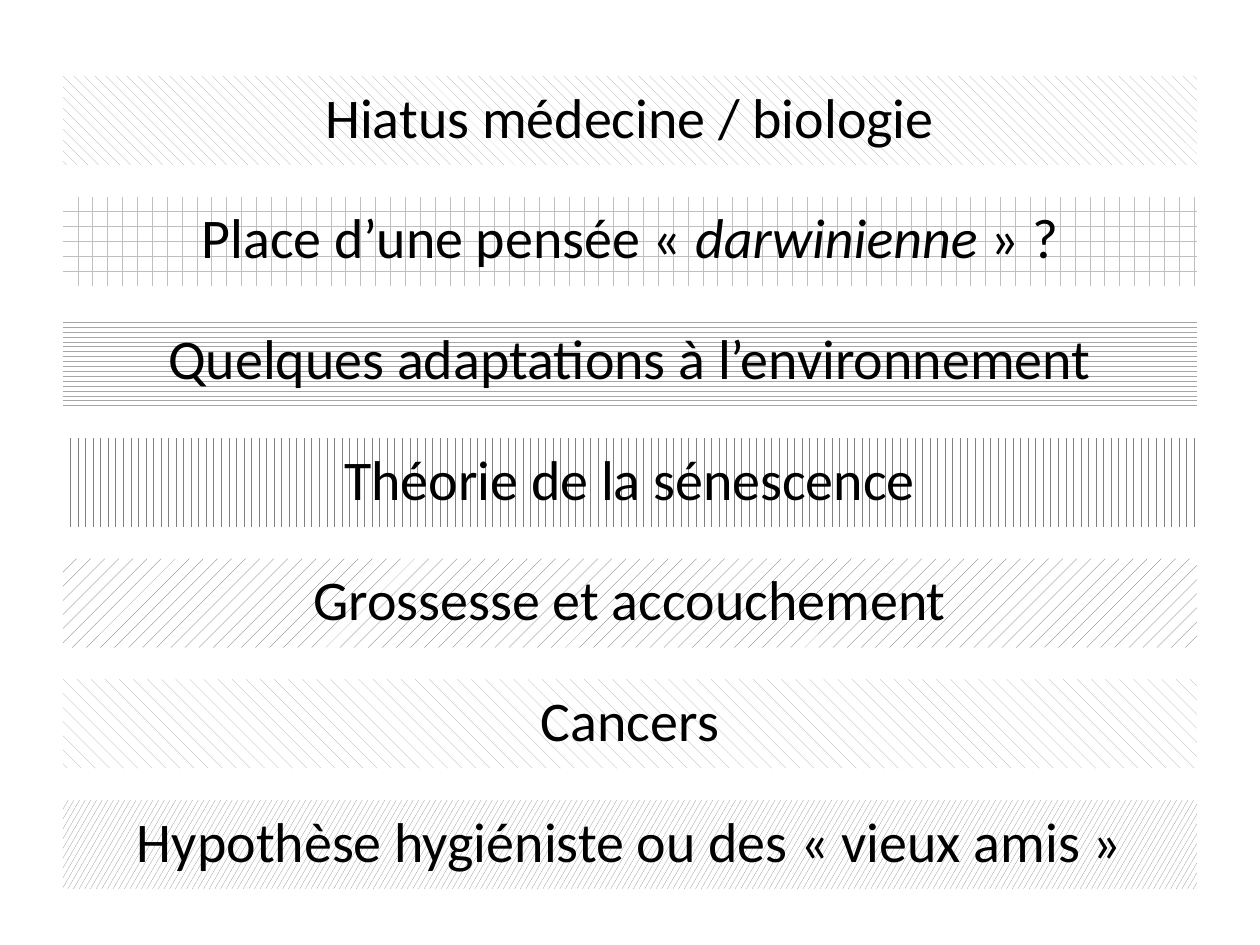
from lxml import etree
from pptx import Presentation
from pptx.dml.color import RGBColor
from pptx.enum.dml import MSO_PATTERN
from pptx.enum.shapes import MSO_SHAPE
from pptx.enum.text import MSO_ANCHOR, MSO_AUTO_SIZE, PP_ALIGN
from pptx.oxml.ns import qn
from pptx.util import Pt

PX = 914400 / 126
RECTANGLE = MSO_SHAPE.RECTANGLE
TOP, NO_AUTOFIT, CENTER = MSO_ANCHOR.TOP, MSO_AUTO_SIZE.NONE, PP_ALIGN.CENTER

COLORS = {
    "text": "000000",
    "paper": "FFFFFF",
    "light": "BFBFBF",
    "silver": "A6A6A6",
    "gray": "808080",
    "dark": "595959",
}

# Each topic: pattern, pattern colour, text runs as (text, italic)
TOPICS = [
    (MSO_PATTERN.DASHED_DOWNWARD_DIAGONAL, "silver",
     [("Hiatus médecine / biologie", False)]),
    (MSO_PATTERN.HORIZONTAL_BRICK, "light",
     [("Place d’une pensée « ", False), ("darwinienne", True), (" » ?", False)]),
    (MSO_PATTERN.WAVE, "silver",
     [("Quelques adaptations à l’environnement", False)]),
    (MSO_PATTERN.DASHED_VERTICAL, "gray",
     [("Théorie de la sénescence", False)]),
    (MSO_PATTERN.PERCENT_10, "dark",
     [("Grossesse et accouchement", False)]),
    (MSO_PATTERN.SHINGLE, "silver",
     [("Cancers", False)]),
    (MSO_PATTERN.LARGE_CONFETTI, "gray",
     [("Hypothèse hygiéniste ou des « vieux amis »", False)]),
]

FRAME_FORMAT = {"word_wrap": True, "auto_size": NO_AUTOFIT, "vertical_anchor": TOP}
PARAGRAPH_FORMAT = {"alignment": CENTER, "space_before": Pt(0)}
FONT_FORMAT = {"name": "Calibri", "size": Pt(32), "bold": False}


def px(length):
    return round(length * PX)


def color(name):
    return RGBColor.from_string(COLORS[name])


def apply_format(target, values):
    for name, value in values.items():
        setattr(target, name, value)


def write_text(shape, runs):
    apply_format(shape.text_frame, FRAME_FORMAT)
    paragraph = shape.text_frame.paragraphs[0]
    apply_format(paragraph, PARAGRAPH_FORMAT)
    # No bullet and no hanging indent
    properties = paragraph._p.get_or_add_pPr()
    properties.set("marL", "0")
    properties.set("indent", "0")
    etree.SubElement(properties, qn("a:buNone"))
    for text, italic in runs:
        run = paragraph.add_run()
        run.text = text
        apply_format(run.font, {**FONT_FORMAT, "italic": italic})
        run.font.color.rgb = color("text")


def format_band(shape, box, pattern, pattern_color, runs):
    apply_format(shape, dict(zip(("left", "top", "width", "height"), map(px, box))))
    shape.fill.patterned()
    shape.fill.pattern = pattern
    shape.fill.fore_color.rgb = color(pattern_color)
    shape.fill.back_color.rgb = color("paper")
    shape.line.fill.background()
    write_text(shape, runs)


def add_topic_bands(slide, left, top, width, height):
    band_height = 89
    pitch = (height - band_height) / (len(TOPICS) - 1)
    for index, topic in enumerate(TOPICS):
        # The first topic is the body placeholder
        if index == 0:
            shape = slide.placeholders[1]
        else:
            shape = slide.shapes.add_shape(RECTANGLE, 0, 0, 0, 0)
            shape.shadow.inherit = False
        box = (left, top + index * pitch, width, band_height)
        format_band(shape, box, *topic)


def main():
    presentation = Presentation()
    presentation.slide_width, presentation.slide_height = px(1260), px(945)
    slide = presentation.slides.add_slide(presentation.slide_layouts[1])

    # The slide has no title
    title = slide.shapes.title.element
    title.getparent().remove(title)

    add_topic_bands(slide, 63, 76, 1134, 813)
    presentation.save("out.pptx")


if __name__ == "__main__":
    main()
